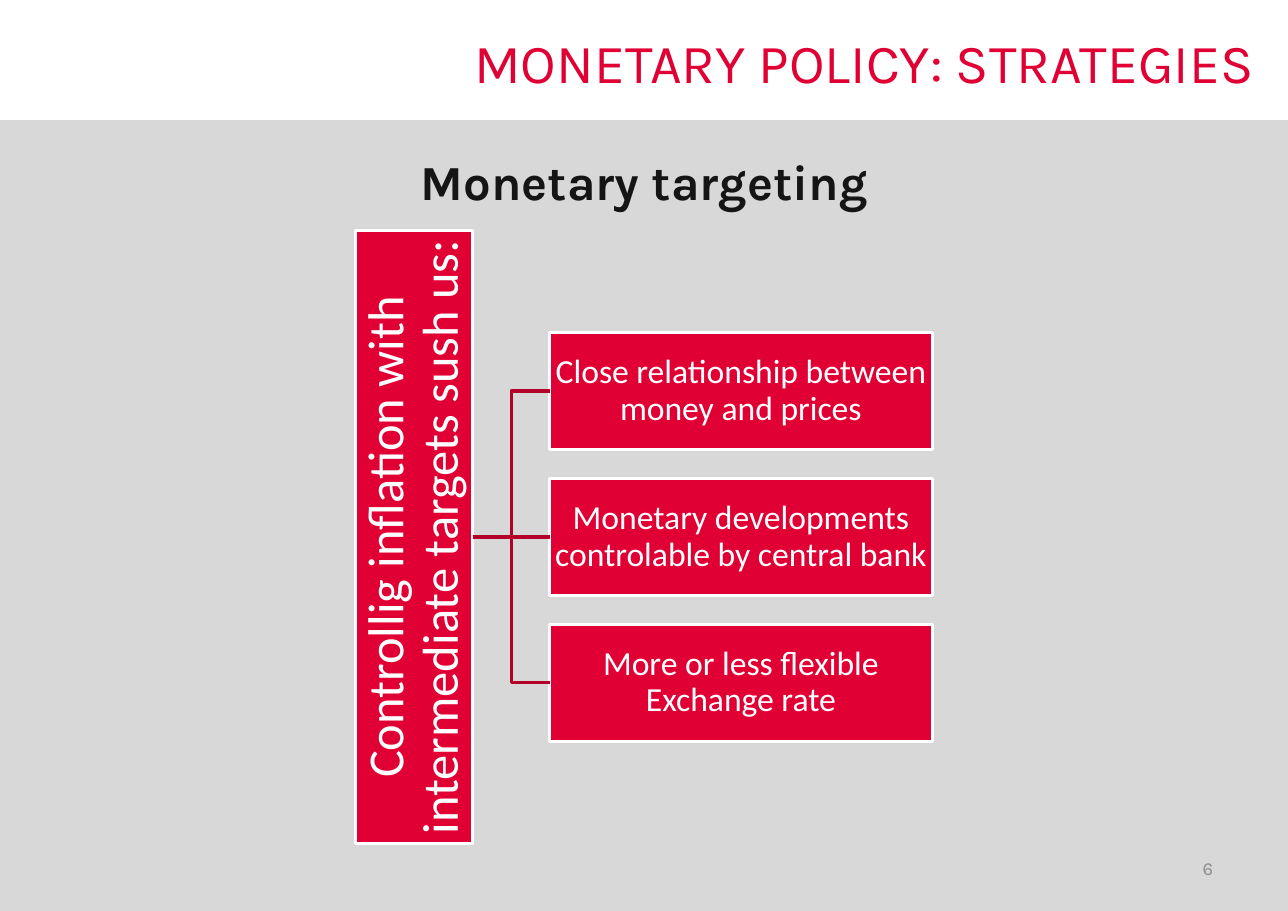
from pptx import Presentation
from pptx.dml.color import RGBColor
from pptx.enum.shapes import MSO_CONNECTOR, MSO_SHAPE
from pptx.enum.text import MSO_ANCHOR, PP_ALIGN
from pptx.oxml.ns import qn
from pptx.util import Inches, Pt
from lxml import etree

RED, DARK_RED, WHITE = "E00034", "B3002A", "FFFFFF"
GRAY, BLACK, PALE = "D8D8D8", "151515", "8C8C8C"
TARGETS = [
    "Close relationship between money and prices",
    "Monetary developments controlable by central bank",
    "More or less flexible Exchange rate",
]


def color(hex_value):
    return RGBColor.from_string(hex_value)


def write(frame, text, size, font, ink, align, anchor=MSO_ANCHOR.MIDDLE, bold=False):
    frame.word_wrap = True
    frame.vertical_anchor = anchor
    paragraph = frame.paragraphs[0]
    paragraph.alignment = align
    run = paragraph.add_run()
    run.text = text
    run.font.size, run.font.name, run.font.bold = Pt(size), font, bold
    run.font.color.rgb = color(ink)
    return paragraph


def add_rect(slide, left, top, width, height, fill):
    rect = slide.shapes.add_shape(MSO_SHAPE.RECTANGLE, Inches(left), Inches(top),
                                  Inches(width), Inches(height))
    rect.shadow.inherit = False
    rect.fill.solid()
    rect.fill.fore_color.rgb = color(fill)
    rect.line.fill.background()
    return rect


def add_node(slide, left, top, width, height, text, size):
    node = add_rect(slide, left, top, width, height, RED)
    node.line.color.rgb = color(WHITE)
    node.line.width = Pt(2)
    frame = node.text_frame
    frame.margin_left = frame.margin_right = Inches(0.02)
    frame.margin_top = frame.margin_bottom = Inches(0.02)
    write(frame, text, size, "Calibri", WHITE, PP_ALIGN.CENTER).line_spacing = 0.9
    return node


def add_branch(slide, root, target, kind):
    branch = slide.shapes.add_connector(kind, 0, 0, 0, 0)
    branch.begin_connect(root, 3)
    branch.end_connect(target, 1)
    branch.line.color.rgb = color(DARK_RED)
    branch.line.width = Pt(2)
    etree.SubElement(branch.element.spPr, qn("a:effectLst"))


def add_heading(slide, left, top, width, height):
    title = slide.shapes.title
    title.left, title.top = Inches(left), Inches(top)
    title.width, title.height = Inches(width), Inches(height)
    write(title.text_frame, "MONETARY POLICY: STRATEGIES", 36, "Karla", RED, PP_ALIGN.RIGHT)


def add_label(slide, left, top, width, height, text, *style, **options):
    label = slide.shapes.add_textbox(Inches(left), Inches(top), Inches(width), Inches(height))
    write(label.text_frame, text, *style, **options)


def add_hierarchy(slide, left, top, width, height):
    thickness, target_width, pitch = 1.06, 3.47, 1.325
    middle = top + (height - thickness) / 2

    # Root box with text running upwards
    root = add_node(slide, left, top, thickness, height,
                    "Controllig inflation with intermediate targets sush us:", 33)
    root.text_frame._txBody.bodyPr.set("vert", "vert270")

    # Target boxes, centred on the root, and their branches
    for index, text in enumerate(TARGETS):
        offset = index - (len(TARGETS) - 1) / 2
        target = add_node(slide, left + width - target_width, middle + offset * pitch,
                          target_width, thickness, text, 22)
        add_branch(slide, root, target, MSO_CONNECTOR.ELBOW if offset else MSO_CONNECTOR.STRAIGHT)


def main():
    presentation = Presentation()
    presentation.slide_width, presentation.slide_height = Inches(11.69), Inches(8.27)
    slide = presentation.slides.add_slide(presentation.slide_layouts[5])

    # Gray content area and title
    add_rect(slide, 0, 1.09, 11.69, 7.18, GRAY)
    add_heading(slide, 2.99, 0.2, 8.49, 0.72)

    # Subheading and page number
    add_label(slide, 0.59, 1.33, 10.52, 0.65, "Monetary targeting", 32, "Karla", BLACK,
              PP_ALIGN.CENTER, anchor=MSO_ANCHOR.TOP, bold=True)
    add_label(slide, 8.38, 7.66, 2.73, 0.44, "6", 12, "Karla", PALE, PP_ALIGN.RIGHT)

    # Diagram
    add_hierarchy(slide, 3.23, 2.09, 5.23, 5.57)
    presentation.save("out.pptx")


if __name__ == "__main__":
    main()
